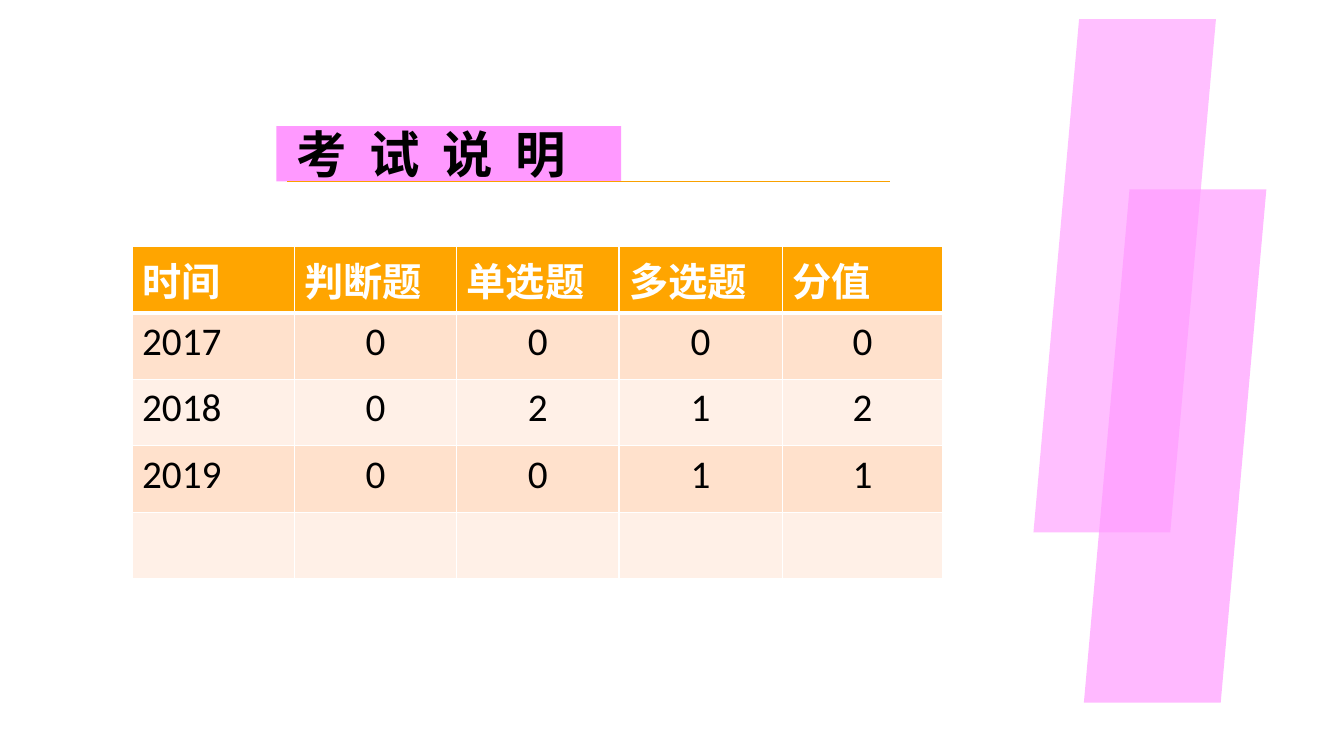
from lxml.etree import SubElement
from pptx import Presentation
from pptx.dml.color import RGBColor
from pptx.enum.shapes import MSO_CONNECTOR, MSO_SHAPE
from pptx.enum.text import MSO_ANCHOR, PP_ALIGN
from pptx.oxml.ns import qn
from pptx.util import Inches, Pt

PINK = RGBColor(0xFF, 0x99, 0xFF)
ORANGE = RGBColor(0xFF, 0xA5, 0x00)
RULE_ORANGE = RGBColor(0xF9, 0xA1, 0x00)
PEACH = RGBColor(0xFF, 0xE1, 0xCC)
CREAM = RGBColor(0xFF, 0xF0, 0xE7)
WHITE = RGBColor(0xFF, 0xFF, 0xFF)
BLACK = RGBColor(0x00, 0x00, 0x00)

COLUMN_WIDTHS = [1.61, 1.61, 1.61, 1.62, 1.59]
ROW_HEIGHT = 0.66
EXAM_ROWS = [
    ["时间", "判断题", "单选题", "多选题", "分值"],
    ["2017", "0", "0", "0", "0"],
    ["2018", "0", "2", "1", "2"],
    ["2019", "0", "0", "1", "1"],
    [""] * 5,
]


class SlideBuilder:
    title_font = "Noto Sans CJK SC"
    table_font = "Calibri"

    def __init__(self, slide):
        self.s = slide

    def style(self, p, name, size, color, bold):
        font = p.font
        font.name, font.size, font.bold = name, Pt(size), bold
        font.color.rgb = color
        props = p._p.pPr.find(qn("a:defRPr"))
        SubElement(props, qn("a:ea")).set("typeface", self.title_font)
        return props

    def shape(self, kind, x, y, w, h, opacity=100):
        sp = self.s.shapes.add_shape(kind, Inches(x), Inches(y), Inches(w), Inches(h))
        sp.shadow.inherit = False
        sp.fill.solid()
        sp.fill.fore_color.rgb = PINK
        sp.line.fill.background()
        if opacity < 100:
            color = sp._element.spPr.find(qn("a:solidFill"))[0]
            SubElement(color, qn("a:alpha")).set("val", str(opacity * 1000))
        return sp

    def title(self, text, x, y, w, h):
        tf = self.shape(MSO_SHAPE.RECTANGLE, x, y, w, h).text_frame
        tf.word_wrap = True
        tf.vertical_anchor = MSO_ANCHOR.MIDDLE
        tf.margin_left = Inches(0.2)
        p = tf.paragraphs[0]
        p.text = text
        p.alignment = PP_ALIGN.LEFT
        p.space_before = Pt(7)
        props = self.style(p, self.title_font, 36, BLACK, True)
        props.set("spc", "400")

    def rule(self, x1, x2, y):
        line = self.s.shapes.add_connector(
            MSO_CONNECTOR.STRAIGHT, Inches(x1), Inches(y), Inches(x2), Inches(y))
        line.line.color.rgb = RULE_ORANGE
        line.line.width = Pt(0.75)
        SubElement(line._element.spPr, qn("a:effectLst"))

    def borders(self, cell, **widths):
        """Draw white borders; they must come before the cell's fill."""
        tcPr = cell._tc.get_or_add_tcPr()
        for side, width in widths.items():
            ln = SubElement(tcPr, qn(f"a:ln{side}"), w=str(Pt(width)))
            fill = SubElement(ln, qn("a:solidFill"))
            SubElement(fill, qn("a:srgbClr"), val=str(WHITE))

    def table(self, rows, x, y):
        table = self.s.shapes.add_table(
            len(rows), len(COLUMN_WIDTHS), Inches(x), Inches(y),
            Inches(sum(COLUMN_WIDTHS)), Inches(ROW_HEIGHT * len(rows))).table
        for column, width in zip(table.columns, COLUMN_WIDTHS):
            column.width = Inches(width)
        for i, row in enumerate(rows):
            table.rows[i].height = Inches(ROW_HEIGHT)
            header = i == 0
            for j, text in enumerate(row):
                cell = table.cell(i, j)
                self.borders(cell, L=1, R=1, T=3 if i == 1 else 1, B=3 if header else 1)
                cell.fill.solid()
                cell.fill.fore_color.rgb = ORANGE if header else PEACH if i % 2 else CREAM
                p = cell.text_frame.paragraphs[0]
                p.text = text
                p.alignment = PP_ALIGN.LEFT if header or j == 0 else PP_ALIGN.CENTER
                self.style(p, self.table_font, 28, WHITE if header else BLACK, header)


def main():
    prs = Presentation()
    prs.slide_width, prs.slide_height = Inches(13.33), Inches(7.5)
    b = SlideBuilder(prs.slides.add_slide(prs.slide_layouts[6]))
    b.title("考 试 说 明", 2.74, 1.25, 3.42, 0.55)
    for x, y, opacity in [(10.25, 0.19, 62), (10.75, 1.88, 68)]:
        b.shape(MSO_SHAPE.PARALLELOGRAM, x, y, 1.81, 5.09, opacity)
    b.rule(2.85, 8.83, 1.8)
    b.table(EXAM_ROWS, 1.31, 2.44)
    prs.save("out.pptx")


if __name__ == "__main__":
    main()
